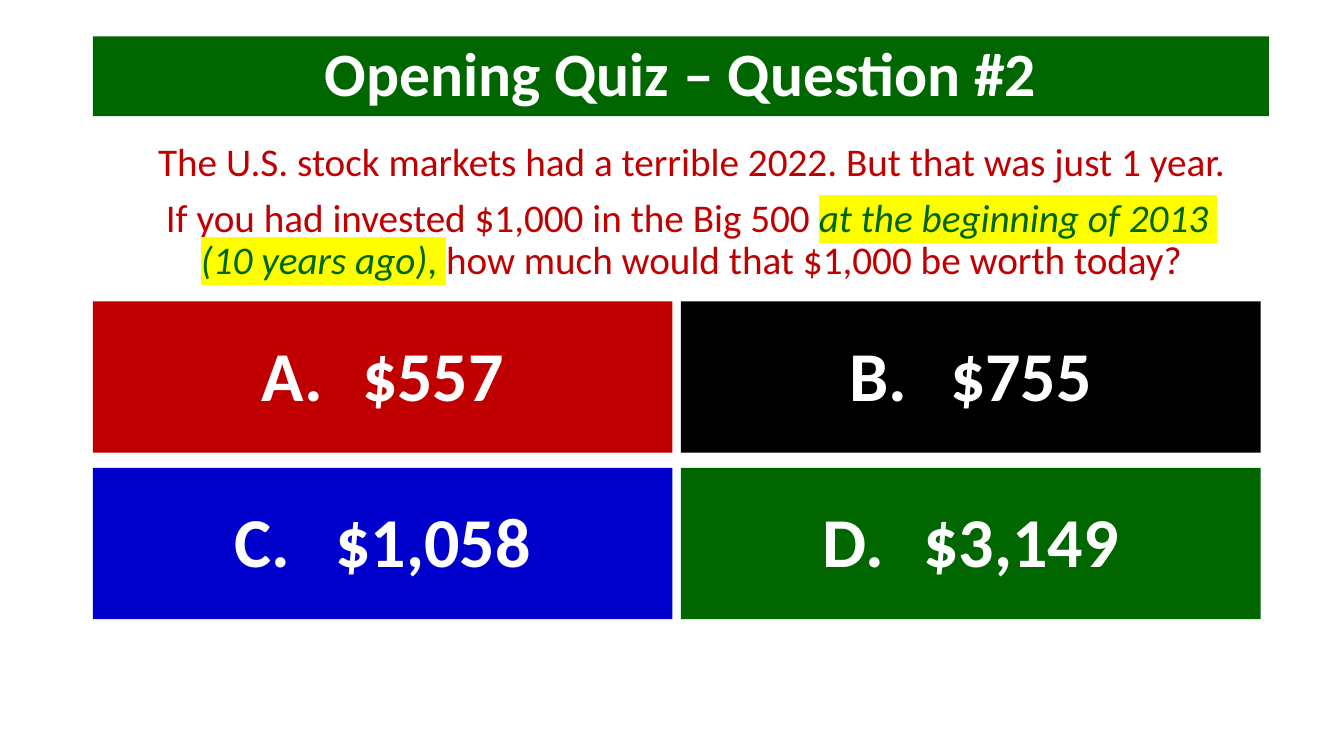
from dataclasses import dataclass

from lxml import etree
from pptx import Presentation
from pptx.dml.color import RGBColor
from pptx.enum.shapes import MSO_SHAPE
from pptx.enum.text import MSO_ANCHOR, PP_ALIGN
from pptx.oxml.ns import qn
from pptx.util import Pt

RECT = MSO_SHAPE.RECTANGLE
CENTER = PP_ALIGN.CENTER
TOP = MSO_ANCHOR.TOP
MIDDLE = MSO_ANCHOR.MIDDLE


@dataclass(frozen=True)
class Theme:
    font: str = "Calibri"
    red: str = "C00000"
    green: str = "006600"
    blue: str = "0000CC"
    black: str = "000000"
    white: str = "FFFFFF"
    mark: str = "FFFF00"
    title: int = 44
    body: int = 28
    answer: int = 50
    leading: float = 0.9


def write(para, words, font, size, color, bold=False, italic=False, mark=None):
    if words.startswith("\n"):
        para.add_line_break()
    run = para.add_run()
    run.text = words.lstrip("\n")
    run.font.size = Pt(size)
    run.font.bold = bold
    run.font.italic = italic
    run.font.color.rgb = RGBColor.from_string(color)
    if mark:
        light = etree.SubElement(run.font._element, qn("a:highlight"))
        etree.SubElement(light, qn("a:srgbClr"), val=mark)
    run.font.name = font


class Board:
    def __init__(self, slide, theme):
        self.slide = slide
        self.theme = theme

    def style(self, para, before=0, tab=None):
        para.alignment = CENTER
        para.line_spacing = self.theme.leading
        para.space_before = Pt(before)
        if tab:
            stops = etree.SubElement(para._p.get_or_add_pPr(), qn("a:tabLst"))
            etree.SubElement(stops, qn("a:tab"), pos=str(Pt(tab)), algn="l")

    def panel(self, box, fill, words, size, anchor=MIDDLE, inset=3.6, tab=None):
        shape = self.slide.shapes.add_shape(RECT, *map(Pt, box))
        shape.shadow.inherit = False
        shape.fill.solid()
        shape.fill.fore_color.rgb = RGBColor.from_string(fill)
        shape.line.fill.background()
        frame = shape.text_frame
        frame.word_wrap = True
        frame.vertical_anchor = anchor
        frame.margin_top = Pt(inset)
        para = frame.paragraphs[0]
        self.style(para, tab=tab)
        write(para, words, self.theme.font, size, self.theme.white, bold=True)

    def prose(self, box, paras, size, gap):
        frame = self.slide.shapes.add_textbox(*map(Pt, box)).text_frame
        frame.word_wrap = True
        for index, parts in enumerate(paras):
            para = frame.add_paragraph() if index else frame.paragraphs[0]
            self.style(para, before=gap if index else 0)
            for words, look in parts:
                write(para, words, self.theme.font, size, **look)


def main():
    deck = Presentation()
    deck.slide_width, deck.slide_height = Pt(960), Pt(540)
    theme = Theme()
    board = Board(deck.slides.add_slide(deck.slide_layouts[6]), theme)

    left = 66.4
    board.panel((left, 26, 840, 57), theme.green,
                "Opening Quiz – Question #2", theme.title)

    plain = {"color": theme.red}
    accent = {"color": theme.green, "mark": theme.mark}
    strong = {**accent, "italic": True}
    board.prose((left, 98, 855, 112), [
        [("The U.S. stock markets had a terrible 2022. But that was just 1 year.", plain)],
        [("If you had invested $1,000 in the Big 500 ", plain),
         ("at the beginning of 2013 ", strong),
         ("\n(10 years ago)", strong),
         (", ", accent),
         ("how much would that $1,000 be worth today?", plain)],
    ], theme.body, 10)

    answers = [
        ("A.\t$557", theme.red),
        ("B.\t$755", theme.black),
        ("C.\t$1,058", theme.blue),
        ("D.\t$3,149", theme.green),
    ]
    for index, (words, fill) in enumerate(answers):
        row, col = divmod(index, 2)
        box = (left + 420 * col, 215.3 + 119 * row, 414, 108)
        board.panel(box, fill, words, theme.answer, TOP, 28, 72)

    deck.save("out.pptx")


if __name__ == "__main__":
    main()
